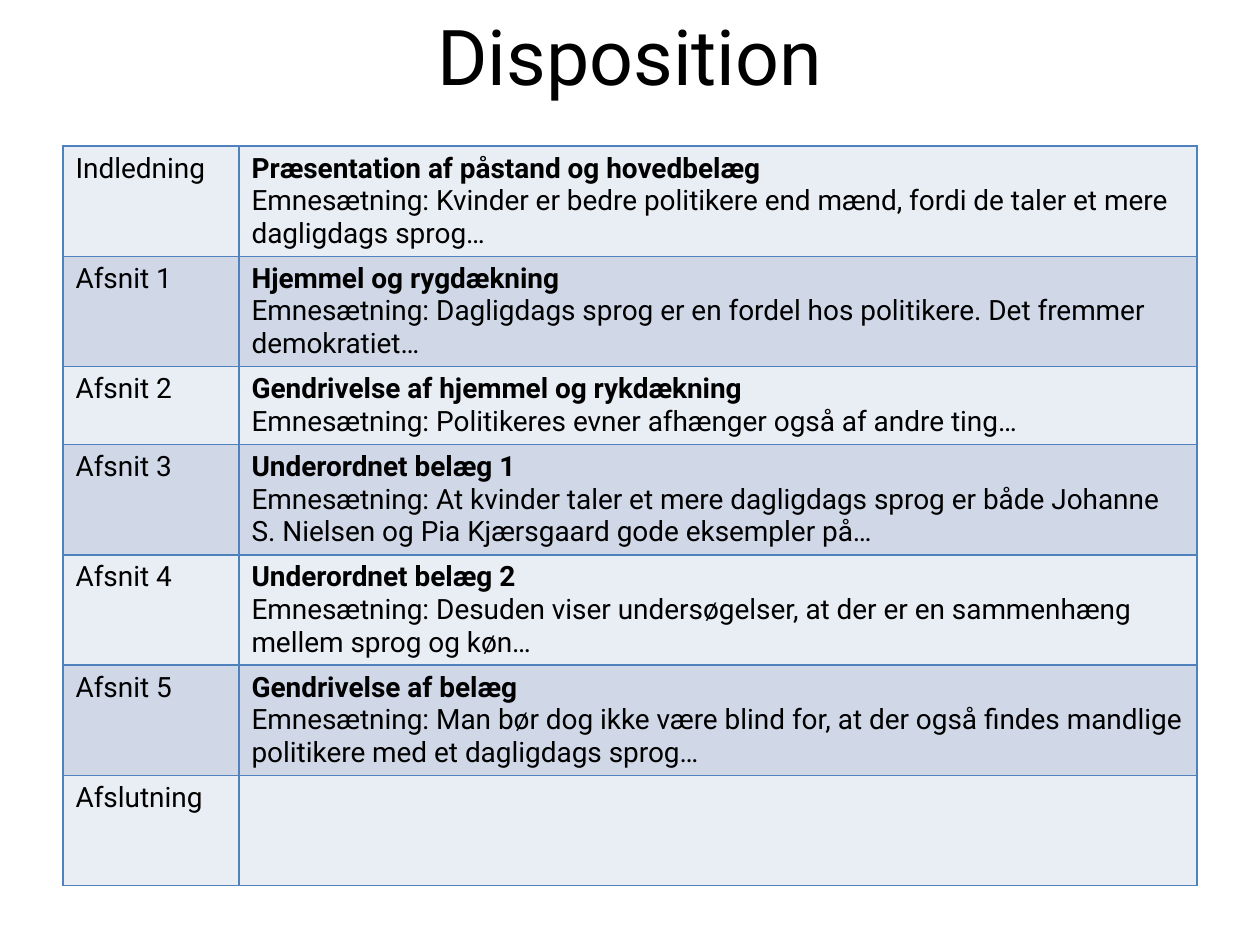
from dataclasses import dataclass

from lxml.etree import SubElement
from pptx import Presentation
from pptx.dml.color import RGBColor
from pptx.enum.text import MSO_ANCHOR, PP_ALIGN
from pptx.oxml.ns import qn
from pptx.util import Emu, Pt

PX = 914400 // 126
FONT = "Roboto"
BLACK = "000000"
BORDER = "4F81BD"
BANDS = ("E9EDF4", "D0D8E8")
LABEL_WIDTH, CONTENT_WIDTH = 176, 958


@dataclass
class Section:
    label: str
    heading: str = ""
    topic: str = ""
    height: int = 110


SECTIONS = [
    Section("Indledning", "Præsentation af påstand og hovedbelæg",
            "Kvinder er bedre politikere end mænd, fordi de taler et mere dagligdags sprog…"),
    Section("Afsnit 1", "Hjemmel og rygdækning",
            "Dagligdags sprog er en fordel hos politikere. Det fremmer demokratiet…"),
    Section("Afsnit 2", "Gendrivelse af hjemmel og rykdækning",
            "Politikeres evner afhænger også af andre ting…", 78),
    Section("Afsnit 3", "Underordnet belæg 1",
            "At kvinder taler et mere dagligdags sprog er både Johanne S. Nielsen "
            "og Pia Kjærsgaard gode eksempler på…"),
    Section("Afsnit 4", "Underordnet belæg 2",
            "Desuden viser undersøgelser, at der er en sammenhæng mellem sprog og køn…"),
    Section("Afsnit 5", "Gendrivelse af belæg",
            "Man bør dog ikke være blind for, at der også findes mandlige politikere "
            "med et dagligdags sprog…"),
    Section("Afslutning"),
]


def px(length: int) -> Emu:
    return Emu(length * PX)


def color(value: str) -> RGBColor:
    return RGBColor.from_string(value)


def add_run(paragraph, text: str, size: int, bold: bool = False) -> None:
    run = paragraph.add_run()
    run.text = text
    run.font.name = FONT
    run.font.size = Pt(size)
    run.font.bold = bold
    run.font.color.rgb = color(BLACK)


def style_cell(cell, fill: str) -> None:
    cell.fill.solid()
    cell.fill.fore_color.rgb = color(fill)
    properties = cell._tc.get_or_add_tcPr()
    for position, side in enumerate(("lnL", "lnR", "lnT", "lnB")):
        line = SubElement(properties, qn(f"a:{side}"), w=str(Pt(1)))
        solid = SubElement(line, qn("a:solidFill"))
        SubElement(solid, qn("a:srgbClr"), val=BORDER)
        properties.insert(position, line)  # borders must precede the fill


def add_title(slide, text: str) -> None:
    title = slide.shapes.title
    title.left, title.top, title.width, title.height = px(63), px(0), px(1134), px(110)
    frame = title.text_frame
    frame.vertical_anchor = MSO_ANCHOR.MIDDLE
    frame.paragraphs[0].alignment = PP_ALIGN.CENTER
    add_run(frame.paragraphs[0], text, 44)


def add_outline(slide, sections: list[Section]) -> None:
    table = slide.shapes.add_table(
        len(sections), 2, px(63), px(146), px(LABEL_WIDTH + CONTENT_WIDTH),
        px(sum(section.height for section in sections))).table
    table.first_row = False
    table.horz_banding = False
    table.columns[0].width = px(LABEL_WIDTH)
    table.columns[1].width = px(CONTENT_WIDTH)
    for index, section in enumerate(sections):
        table.rows[index].height = px(section.height)
        label, content = table.rows[index].cells
        for cell in (label, content):
            style_cell(cell, BANDS[index % 2])
        add_run(label.text_frame.paragraphs[0], section.label, 16)
        if section.heading:
            add_run(content.text_frame.paragraphs[0], section.heading, 16, bold=True)
            add_run(content.text_frame.add_paragraph(), f"Emnesætning: {section.topic}", 16)


def main() -> None:
    deck = Presentation()
    deck.slide_width, deck.slide_height = px(1260), px(945)
    slide = deck.slides.add_slide(deck.slide_layouts[5])
    add_title(slide, "Disposition")
    add_outline(slide, SECTIONS)
    deck.save("out.pptx")


if __name__ == "__main__":
    main()
